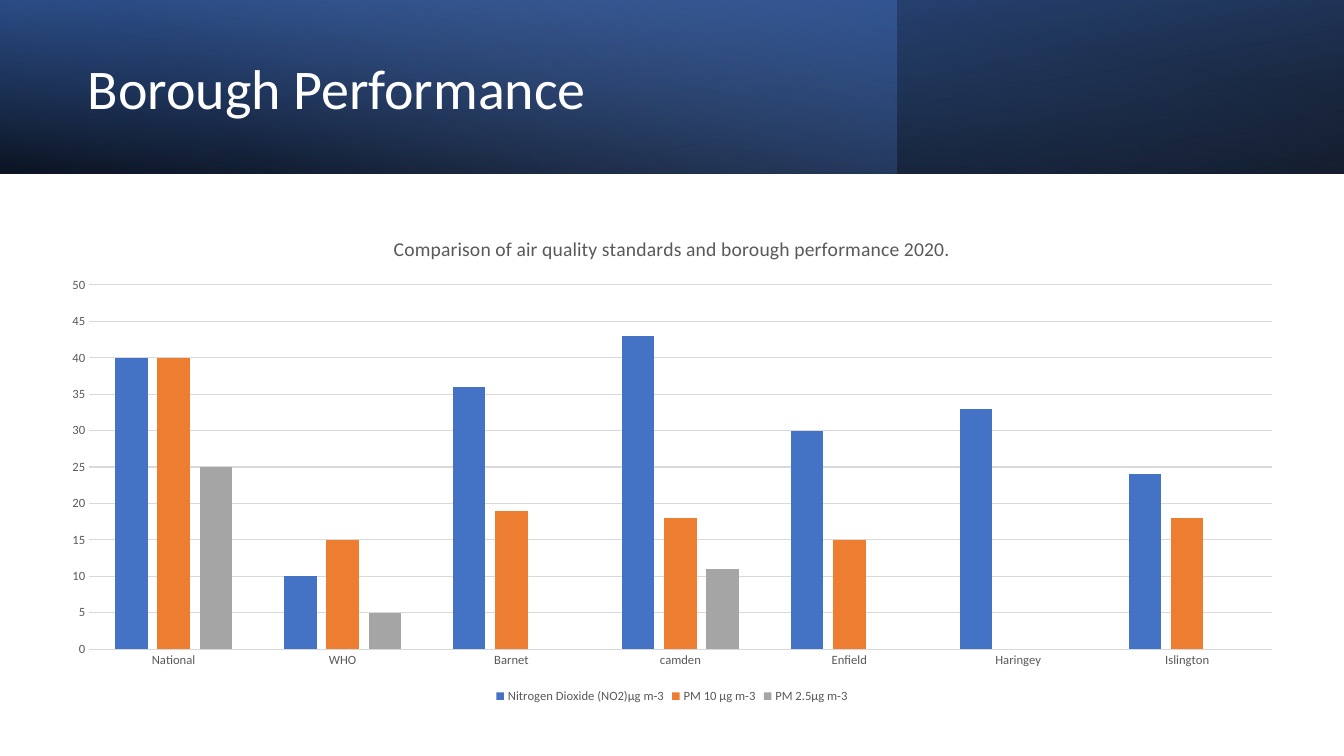
from lxml import etree
from pptx import Presentation
from pptx.chart.data import CategoryChartData
from pptx.dml.color import RGBColor
from pptx.enum.chart import XL_CHART_TYPE, XL_LEGEND_POSITION, XL_TICK_MARK
from pptx.enum.shapes import MSO_SHAPE
from pptx.enum.text import MSO_ANCHOR, PP_ALIGN
from pptx.oxml.ns import qn
from pptx.util import Inches, Pt

COLUMNS = XL_CHART_TYPE.COLUMN_CLUSTERED
BOTTOM = XL_LEGEND_POSITION.BOTTOM
NO_TICK = XL_TICK_MARK.NONE
RECTANGLE = MSO_SHAPE.RECTANGLE
MIDDLE = MSO_ANCHOR.MIDDLE
LEFT = PP_ALIGN.LEFT

BLACK = RGBColor(0x00, 0x00, 0x00)
WHITE = RGBColor(0xFF, 0xFF, 0xFF)
BLUE = RGBColor(0x44, 0x72, 0xC4)
DEEP_BLUE = RGBColor(0x2F, 0x55, 0x97)
PALE_BLUE = RGBColor(0x8F, 0xAA, 0xDC)
ORANGE = RGBColor(0xED, 0x7D, 0x31)
GRAY = RGBColor(0xA5, 0xA5, 0xA5)
TEXT_GRAY = RGBColor(0x59, 0x59, 0x59)
GRID_GRAY = RGBColor(0xD9, 0xD9, 0xD9)

FONT = "Calibri"
SLIDE_WIDTH, SLIDE_HEIGHT, BANNER_HEIGHT = 13.33, 7.5, 1.72

HEADING = "Borough Performance"
CHART_TITLE = "Comparison of air quality standards and borough performance 2020."
PLACES = ["National", "WHO", "Barnet", "camden", "Enfield", "Haringey", "Islington"]
POLLUTANTS = [
    ("Nitrogen Dioxide (NO2)μg m-3", BLUE, [40, 10, 36, 43, 30, 33, 24]),
    ("PM 10 μg m-3", ORANGE, [40, 15, 19, 18, 15, None, 18]),
    ("PM 2.5μg m-3", GRAY, [25, 5, None, 11, None, None, None]),
]
BANNER_LAYERS = [
    (SLIDE_WIDTH, 180, True, 100, [(0, BLACK, 96), (100, DEEP_BLUE, 100)]),
    (8.89, 0, False, 140, [(0, BLUE, 41), (74, PALE_BLUE, 0)]),
    (SLIDE_WIDTH, 0, True, 260, [(0, BLACK, 63), (78, BLUE, 15)]),
]


def add_banner_layer(slide, width, rotation, flipped, angle, stops):
    layer = slide.shapes.add_shape(RECTANGLE, 0, 0, Inches(width), Inches(BANNER_HEIGHT))
    layer.shadow.inherit = False
    layer.line.fill.background()
    layer.rotation = rotation
    if flipped:
        layer._element.spPr.find(qn("a:xfrm")).set("flipH", "1")
    layer.fill.gradient()
    layer.fill.gradient_angle = 360 - angle
    stop_list = layer._element.spPr.find(".//" + qn("a:gsLst"))
    for old_stop in list(stop_list):
        stop_list.remove(old_stop)
    for position, color, opacity in stops:
        stop = etree.SubElement(stop_list, qn("a:gs"), pos=str(position * 1000))
        tint = etree.SubElement(stop, qn("a:srgbClr"), val=str(color))
        etree.SubElement(tint, qn("a:alpha"), val=str(opacity * 1000))


def style_font(font, size, color):
    font.name = FONT
    font.size = Pt(size)
    font.color.rgb = color
    font.bold = False


def add_heading(slide):
    heading = slide.shapes.title
    slide.shapes._spTree.append(heading._element)
    heading.left, heading.top = Inches(0.77), Inches(0.27)
    heading.width, heading.height = Inches(7.72), Inches(1.27)
    heading.text_frame.text = HEADING
    heading.text_frame.vertical_anchor = MIDDLE
    line = heading.text_frame.paragraphs[0]
    line.alignment = LEFT
    line.line_spacing = 0.9
    style_font(line.runs[0].font, 40, WHITE)


def add_performance_chart(slide):
    data = CategoryChartData()
    data.categories = PLACES
    for name, _, values in POLLUTANTS:
        data.add_series(name, values)
    chart = slide.shapes.add_chart(
        COLUMNS, Inches(0.47), Inches(2.15), Inches(12.39), Inches(4.87), data
    ).chart
    style_font(chart.font, 10, BLACK)

    chart.has_title = True
    chart.chart_title.include_in_layout = False
    chart.chart_title.text_frame.text = CHART_TITLE
    style_font(chart.chart_title.text_frame.paragraphs[0].runs[0].font, 14, TEXT_GRAY)

    chart.has_legend = True
    chart.legend.position = BOTTOM
    chart.legend.include_in_layout = False
    style_font(chart.legend.font, 9, TEXT_GRAY)

    places, levels = chart.category_axis, chart.value_axis
    for axis in (places, levels):
        axis.major_tick_mark = axis.minor_tick_mark = NO_TICK
        style_font(axis.tick_labels.font, 9, TEXT_GRAY)
    levels.minimum_scale, levels.maximum_scale, levels.major_unit = 0, 50, 5
    levels.format.line.fill.background()
    for rule in (places.format.line, levels.major_gridlines.format.line):
        rule.color.rgb = GRID_GRAY
        rule.width = Pt(0.75)

    plot = chart.plots[0]
    plot.gap_width, plot.overlap, plot.vary_by_categories = 160, -30, False
    for series, (_, color, _) in zip(plot.series, POLLUTANTS):
        series.format.fill.solid()
        series.format.fill.fore_color.rgb = color


def main():
    deck = Presentation()
    deck.slide_width, deck.slide_height = Inches(SLIDE_WIDTH), Inches(SLIDE_HEIGHT)
    slide = deck.slides.add_slide(deck.slide_layouts[5])
    for layer in BANNER_LAYERS:
        add_banner_layer(slide, *layer)
    add_heading(slide)
    add_performance_chart(slide)
    deck.save("out.pptx")


if __name__ == "__main__":
    main()
